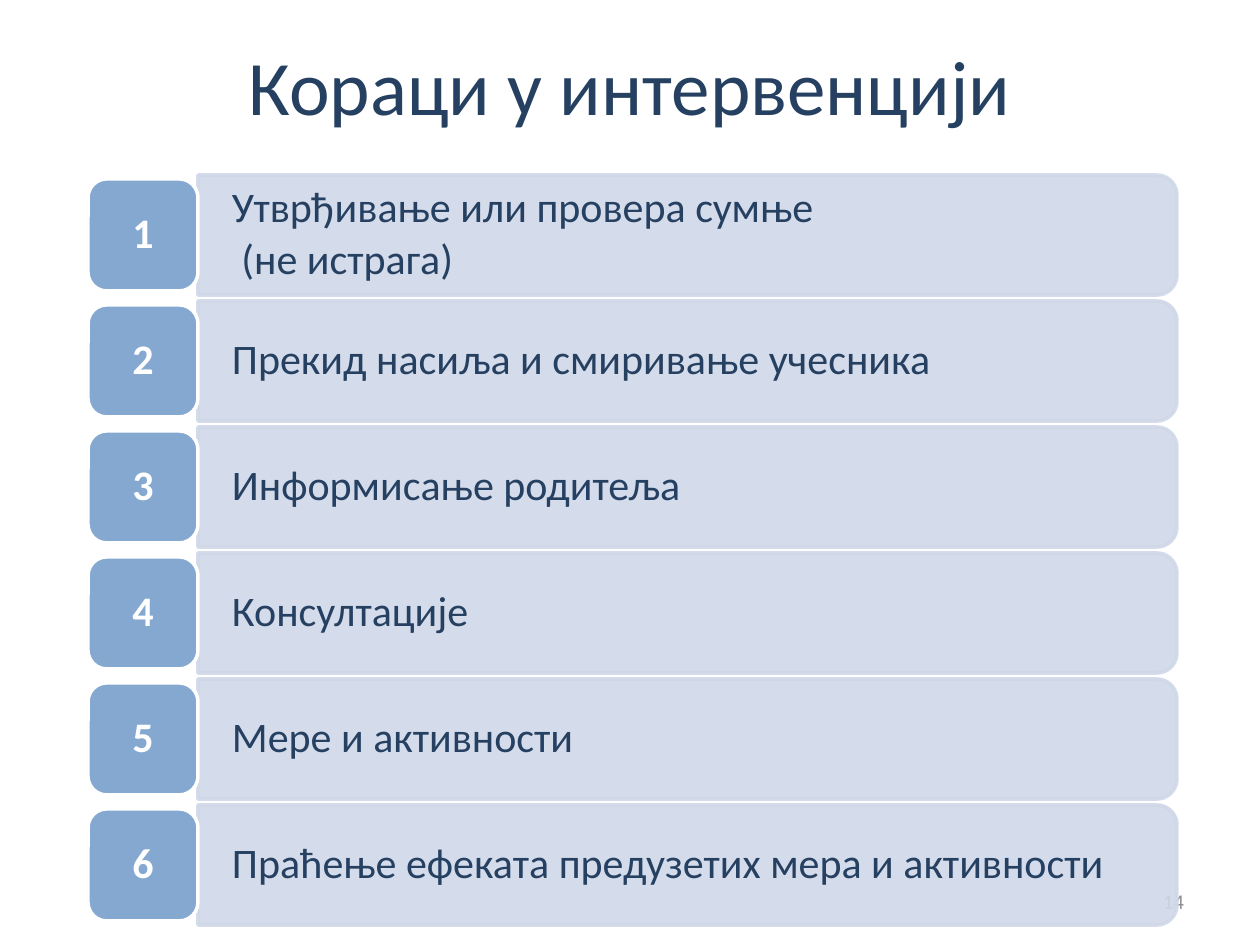
from dataclasses import dataclass
from math import cos, pi, sin

from lxml import etree
from pptx import Presentation
from pptx.dml.color import RGBColor
from pptx.enum.shapes import MSO_SHAPE
from pptx.enum.text import MSO_ANCHOR, PP_ALIGN
from pptx.oxml.ns import qn
from pptx.util import Emu, Pt

ROUNDED = MSO_SHAPE.ROUNDED_RECTANGLE
MIDDLE = MSO_ANCHOR.MIDDLE
LEFT, CENTER, RIGHT = PP_ALIGN.LEFT, PP_ALIGN.CENTER, PP_ALIGN.RIGHT
EMU_PER_PX = 914400 / 126


@dataclass(frozen=True)
class Theme:
    font: str = "Calibri"
    ink: str = "254061"
    bar: str = "D0D8E8"
    badge: str = "4F81BD"
    white: str = "FFFFFF"
    muted: str = "8C8C8C"
    title_size: int = 44
    step_size: int = 24
    number_size: int = 12
    line_width: int = 2


@dataclass(frozen=True)
class Box:
    left: int
    top: int
    width: int
    height: int

    def emu(self):
        return [px(side) for side in (self.left, self.top, self.width, self.height)]


THEME = Theme()
TITLE = "Кораци у интервенцији"
PAGE_NUMBER = "14"
STEPS = [
    ["Утврђивање или провера сумње", " (не истрага)"],
    ["Прекид насиља и смиривање учесника"],
    ["Информисање родитеља"],
    ["Консултације"],
    ["Мере и активности"],
    ["Праћење ефеката предузетих мера и активности"],
]


def px(length):
    return Emu(round(length * EMU_PER_PX))


def apply(target, values):
    for name, value in values.items():
        setattr(target, name, value)


def write(shape, lines, size, color, align, insets=(13, 6, 13, 6), bold=False, para_format=None):
    frame = shape.text_frame
    sides = ("margin_left", "margin_top", "margin_right", "margin_bottom")
    apply(frame, {"word_wrap": True, "vertical_anchor": MIDDLE})
    apply(frame, {side: px(inset) for side, inset in zip(sides, insets)})
    for index, line in enumerate(lines):
        para = frame.add_paragraph() if index else frame.paragraphs[0]
        apply(para, {"alignment": align, **(para_format or {})})
        span = para.add_run()
        span.text = line
        apply(span.font, {"name": THEME.font, "size": Pt(size), "bold": bold})
        span.font.color.rgb = RGBColor.from_string(color)


def paint(shape, fill, line, opacity):
    shape.shadow.inherit = False
    shape.fill.solid()
    shape.fill.fore_color.rgb = RGBColor.from_string(fill)
    shape.line.color.rgb = RGBColor.from_string(line)
    shape.line.width = Pt(THEME.line_width)
    for color in shape._element.spPr.iter(qn("a:srgbClr")):
        if color.get("val") == fill:
            etree.SubElement(color, qn("a:alpha")).set("val", str(opacity * 1000))


def add_label(page, box, text, size, color, align):
    label = page.shapes.add_textbox(*box.emu())
    write(label, [text], size, color, align)


def add_bar(page, box, lines):
    radius, segments = 20, 12
    right, bottom = box.left + box.width, box.top + box.height
    corners = [(box.top + radius, -pi / 2), (bottom - radius, 0)]
    points = [
        (px(right - radius + radius * cos(angle)), px(center + radius * sin(angle)))
        for center, start in corners
        for angle in (start + pi / 2 * step / segments for step in range(segments + 1))
    ]
    outline = page.shapes.build_freeform(px(box.left), px(box.top))
    outline.add_line_segments(points + [(px(box.left), px(bottom))], close=True)
    bar = outline.convert_to_shape()
    paint(bar, THEME.bar, THEME.bar, 90)
    write(bar, lines, THEME.step_size, THEME.ink, LEFT, (34, 23, 40, 23),
          para_format={"line_spacing": 0.9, "space_after": Pt(3.6)})


def add_badge(page, box, number):
    badge = page.shapes.add_shape(ROUNDED, *box.emu())
    badge.adjustments[0] = 0.17
    paint(badge, THEME.badge, THEME.white, 69)
    write(badge, [str(number)], THEME.step_size, THEME.white, CENTER, (18, 11, 18, 11),
          bold=True, para_format={"line_spacing": 0.9})


def add_steps(page, box):
    badge_width, bar_height, badge_inset = 110, 120, 4
    pitch = (box.height - bar_height) // (len(STEPS) - 1)
    for index, lines in enumerate(STEPS):
        top = box.top + index * pitch
        add_bar(page, Box(box.left + badge_width, top, box.width - badge_width, bar_height), lines)
        badge_box = Box(box.left, top + badge_inset, badge_width, bar_height - 2 * badge_inset)
        add_badge(page, badge_box, index + 1)


def main():
    deck = Presentation()
    apply(deck, {"slide_width": px(1260), "slide_height": px(945)})
    page = deck.slides.add_slide(deck.slide_layouts[6])
    add_label(page, Box(63, 6, 1134, 158), TITLE, THEME.title_size, THEME.ink, CENTER)
    add_label(page, Box(903, 876, 294, 50), PAGE_NUMBER, THEME.number_size, THEME.muted, RIGHT)
    add_steps(page, Box(88, 175, 1089, 750))
    deck.save("out.pptx")


if __name__ == "__main__":
    main()
